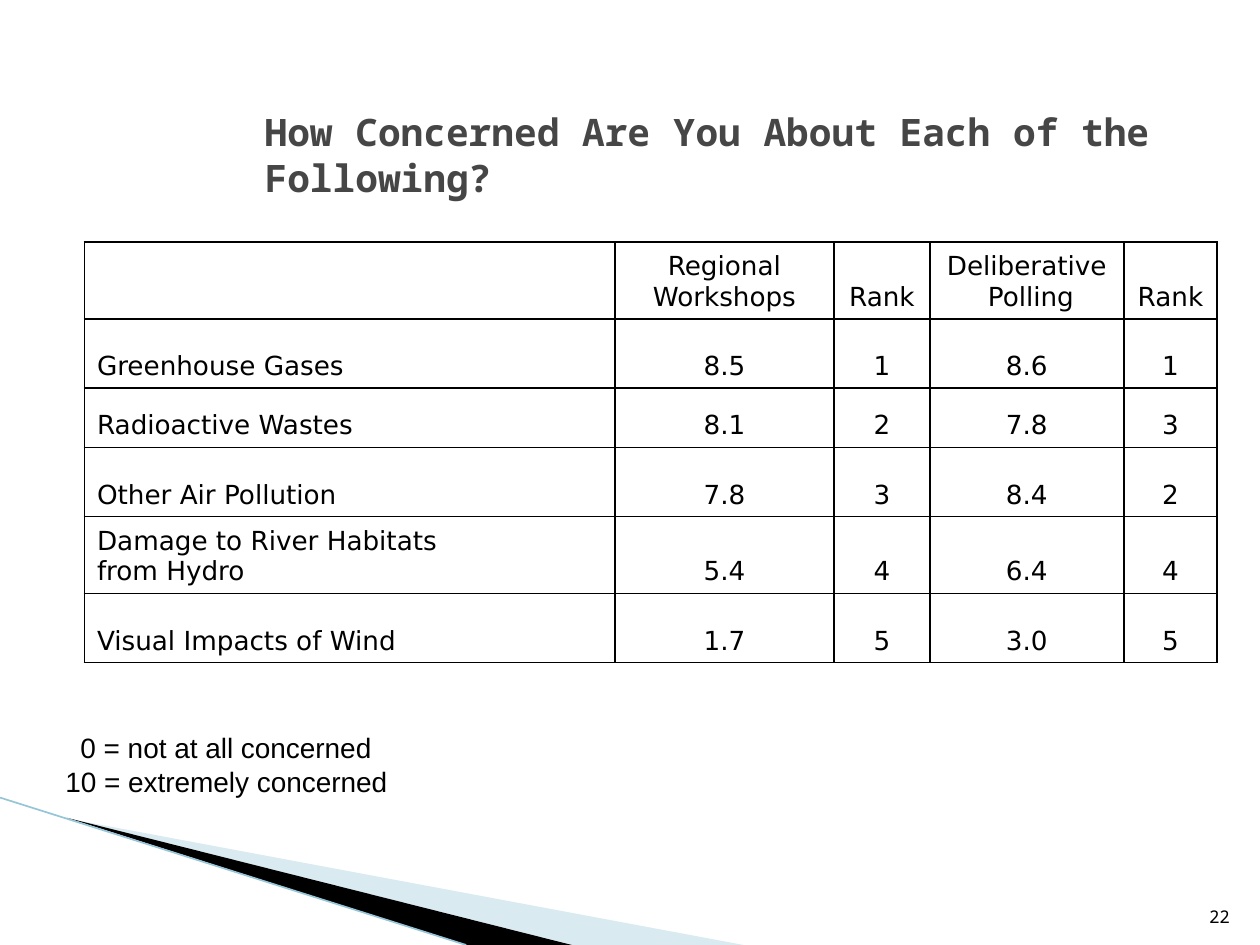
from lxml.etree import SubElement
from pptx import Presentation
from pptx.dml.color import RGBColor
from pptx.enum.shapes import MSO_CONNECTOR
from pptx.enum.text import MSO_ANCHOR as Anchor, MSO_AUTO_SIZE as AutoSize, PP_ALIGN as Align
from pptx.oxml.ns import qn
from pptx.util import Emu, Inches, Pt

# Content
TITLE = "How Concerned Are You About Each of the Following?"
RATINGS = [
    ("", "Regional\nWorkshops", "Rank", "Deliberative\n Polling", "Rank"),
    ("Greenhouse Gases", "8.5", "1", "8.6", "1"),
    ("Radioactive Wastes", "8.1", "2", "7.8", "3"),
    ("Other Air Pollution", "7.8", "3", "8.4", "2"),
    ("Damage to River Habitats\nfrom Hydro", "5.4", "4", "6.4", "4"),
    ("Visual Impacts of Wind", "1.7", "5", "3.0", "5"),
]
SCALE_KEY = [("0 = not at all concerned", 0.12), ("10 = extremely concerned", 0)]  # text, indent
PAGE_NUMBER = "22"

# Look
COLORS = {"text": "000000", "title": "464646", "wedge": "000000",
          "pale wedge": "A0CBDC", "edge": "97C5D8", "border": "000000"}
MONO, SANS, ARIAL = "Noto Sans Mono", "DejaVu Sans", "Arial"
COLUMN_WIDTHS = [4.21, 1.74, 0.76, 1.54, 0.74]
TALL, MEDIUM, LOW = 0.61, 0.55, 0.47
ROW_HEIGHTS = [TALL, MEDIUM, LOW, MEDIUM, TALL, MEDIUM]
HANGING = 0.38
WEDGES = [  # colour, opacity in percent, corners in inches
    ("pale wedge", 40, [(0.55, 6.5), (5.9, 7.5), (4.55, 7.5)]),
    ("wedge", 100, [(0.53, 6.49), (4.54, 7.5), (3.7, 7.5)]),
]


def color(name):
    return RGBColor.from_string(COLORS[name])


def add_run(paragraph, text, size, font, color_name="text", bold=False):
    run = paragraph.add_run()
    run.text = text
    run.font.size, run.font.name, run.font.bold = Pt(size), font, bold
    run.font.color.rgb = color(color_name)


def paragraph_at(frame, index):
    return frame.paragraphs[0] if index == 0 else frame.add_paragraph()


def indent(paragraph, left, first=0):
    properties = paragraph._p.get_or_add_pPr()
    properties.set("marL", str(Inches(left)))
    properties.set("indent", str(Inches(first)))


def add_text_box(slide, left, top, width, height):
    frame = slide.shapes.add_textbox(*map(Inches, (left, top, width, height))).text_frame
    frame.word_wrap = True
    return frame


def add_corner_art(slide):
    for color_name, opacity, corners in WEDGES:
        points = [(Inches(x), Inches(y)) for x, y in corners]
        builder = slide.shapes.build_freeform(*points[0])
        builder.add_line_segments(points[1:], close=True)
        wedge = builder.convert_to_shape()
        wedge.shadow.inherit = False
        wedge.line.fill.background()
        wedge.fill.solid()
        wedge.fill.fore_color.rgb = color(color_name)
        if opacity < 100:
            srgb = wedge.fill._xPr.find(".//" + qn("a:srgbClr"))
            SubElement(srgb, qn("a:alpha"), val=str(opacity * 1000))
    edge = slide.shapes.add_connector(
        MSO_CONNECTOR.STRAIGHT, Emu(0), Inches(6.33), Inches(3.7), Inches(7.5))
    edge.line.color.rgb = color("edge")
    edge.line.width = Pt(0.95)
    SubElement(edge._element.spPr, qn("a:effectLst"))


def add_borders(cell):
    properties = cell._tc.get_or_add_tcPr()
    for position, side in enumerate(("a:lnL", "a:lnR", "a:lnT", "a:lnB")):
        border = properties.makeelement(qn(side), {"w": str(Pt(1))})
        fill = SubElement(border, qn("a:solidFill"))
        SubElement(fill, qn("a:srgbClr"), val=COLORS["border"])
        properties.insert(position, border)


def add_ratings_table(slide):
    table = slide.shapes.add_table(
        len(RATINGS), len(COLUMN_WIDTHS), Inches(0.67), Inches(1.92),
        Inches(sum(COLUMN_WIDTHS)), Inches(sum(ROW_HEIGHTS))).table
    table.first_row = table.horz_banding = False
    for column, width in zip(table.columns, COLUMN_WIDTHS):
        column.width = Inches(width)
    for row, height in zip(table.rows, ROW_HEIGHTS):
        row.height = Inches(height)
    for r, ratings in enumerate(RATINGS):
        for c, text in enumerate(ratings):
            cell = table.cell(r, c)
            cell.fill.background()
            cell.vertical_anchor = Anchor.BOTTOM
            add_borders(cell)
            if not text:
                continue
            for i, line in enumerate(text.split("\n")):
                paragraph = paragraph_at(cell.text_frame, i)
                paragraph.alignment = Align.CENTER if c else Align.LEFT
                indent(paragraph, HANGING, -HANGING)
                add_run(paragraph, line, 15, SANS)


def main():
    deck = Presentation()
    deck.slide_width, deck.slide_height = Inches(10), Inches(7.5)
    slide = deck.slides.add_slide(deck.slide_layouts[5])

    add_corner_art(slide)

    # Page number
    number = add_text_box(slide, 9.46, 7.01, 0.4, 0.4)
    number.vertical_anchor = Anchor.BOTTOM
    number.paragraphs[0].alignment = Align.RIGHT
    add_run(number.paragraphs[0], PAGE_NUMBER, 10, MONO)

    # Title
    title = slide.shapes.title
    title.left, title.top, title.width, title.height = map(Inches, (2, 1, 8, 0.45))
    heading = title.text_frame
    heading.auto_size, heading.word_wrap = AutoSize.NONE, True
    heading.vertical_anchor = Anchor.MIDDLE
    heading.paragraphs[0].alignment = Align.LEFT
    add_run(heading.paragraphs[0], TITLE, 21.6, MONO, "title", bold=True)

    add_ratings_table(slide)

    # Key to the rating scale
    key = add_text_box(slide, 0.42, 5.75, 7.09, 0.64)
    key.auto_size = AutoSize.SHAPE_TO_FIT_TEXT
    for i, (text, left) in enumerate(SCALE_KEY):
        paragraph = paragraph_at(key, i)
        indent(paragraph, left)
        add_run(paragraph, text, 16, ARIAL)

    deck.save("out.pptx")


if __name__ == "__main__":
    main()
